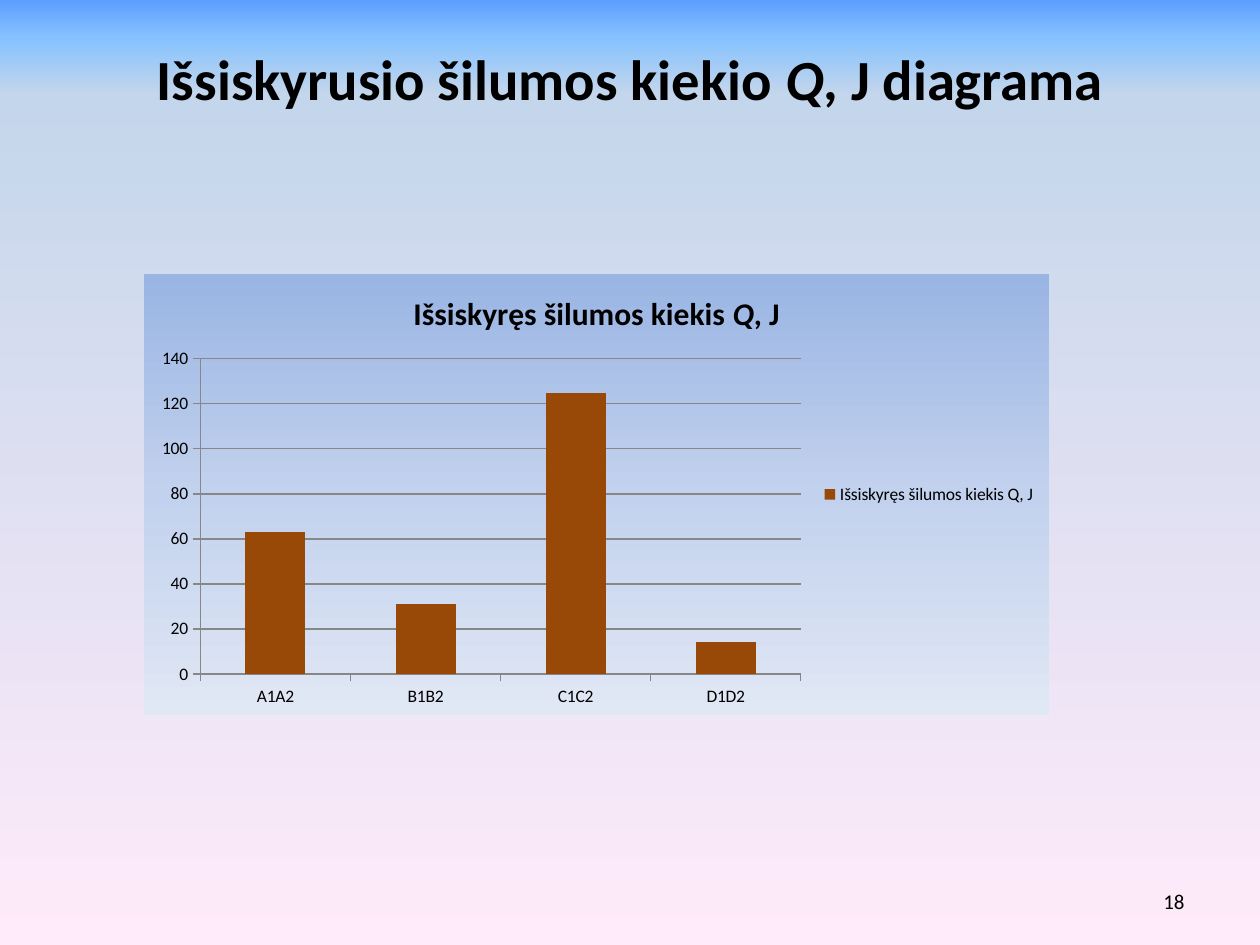
from lxml import etree
from pptx import Presentation
from pptx.chart.data import CategoryChartData
from pptx.dml.color import RGBColor
from pptx.enum.chart import XL_CHART_TYPE, XL_LEGEND_POSITION, XL_TICK_MARK
from pptx.enum.text import MSO_ANCHOR, PP_ALIGN
from pptx.oxml import parse_xml
from pptx.oxml.ns import qn
from pptx.util import Emu, Pt

COLUMNS = XL_CHART_TYPE.COLUMN_CLUSTERED
LEGEND_RIGHT = XL_LEGEND_POSITION.RIGHT
TICK_OUTSIDE = XL_TICK_MARK.OUTSIDE
TOP, MIDDLE = MSO_ANCHOR.TOP, MSO_ANCHOR.MIDDLE
CENTER, RIGHT = PP_ALIGN.CENTER, PP_ALIGN.RIGHT

EMU_PER_PX = 914400 / 126
FONT = "Calibri"
COLORS = {"text": "000000", "bar": "984807", "line": "878787"}
# Gradient stops: percent and colour, from top to bottom
SKY = [(0, "5E9EFF"), (4, "85C2FF"), (10, "C4D6EB"), (100, "FFEBFA")]
CHART_FILL = [(0, "9AB5E4"), (50, "C2D1ED"), (100, "E1E8F5")]


def px(value):
    return Emu(round(value * EMU_PER_PX))


def color(name):
    return RGBColor.from_string(COLORS[name])


def format_font(font, size, bold=False):
    font.name = FONT
    font.size = Pt(size)
    font.bold = bold
    font.color.rgb = color("text")


def write_runs(paragraph, pieces, size, bold=False):
    """Add (text, italic) pieces to a paragraph."""
    for text, italic in pieces:
        run = paragraph.add_run()
        run.text = text
        format_font(run.font, size, bold)
        run.font.italic = italic


def gradient(stops):
    """Return a vertical gradient fill element."""
    fill = etree.Element(qn("a:gradFill"), rotWithShape="1")
    stop_list = etree.SubElement(fill, qn("a:gsLst"))
    for percent, value in stops:
        stop = etree.SubElement(stop_list, qn("a:gs"), pos=str(percent * 1000))
        etree.SubElement(stop, qn("a:srgbClr"), val=value)
    etree.SubElement(fill, qn("a:lin"), ang="5400000", scaled="0")
    return parse_xml(etree.tostring(fill))


def paint_background(slide):
    slide.background.fill.solid()
    solid = next(slide.element.iter(qn("a:solidFill")))
    solid.getparent().replace(solid, gradient(SKY))


def add_title(slide):
    title = slide.shapes.title
    title.left, title.top, title.width, title.height = map(px, (63, 38, 1134, 157))
    title.text_frame.vertical_anchor = TOP
    paragraph = title.text_frame.paragraphs[0]
    paragraph.alignment = CENTER
    pieces = [("Išsiskyrusio šilumos kiekio ", False), ("Q", True), (", J diagrama", False)]
    write_runs(paragraph, pieces, 32.4, bold=True)


def fill_chart_area(chart):
    properties = etree.Element(qn("c:spPr"))
    properties.append(gradient(CHART_FILL))
    line = etree.SubElement(properties, qn("a:ln"))
    etree.SubElement(line, qn("a:noFill"))
    chart.element.find(qn("c:chart")).addnext(properties)


def format_axis(axis):
    axis.major_tick_mark = TICK_OUTSIDE
    axis.format.line.color.rgb = color("line")
    axis.format.line.width = Pt(0.75)


def add_heat_chart(slide):
    data = CategoryChartData()
    data.categories = ["A1A2", "B1B2", "C1C2", "D1D2"]
    data.add_series("Išsiskyręs šilumos kiekis Q, J", (63, 31, 125, 14))
    chart = slide.shapes.add_chart(COLUMNS, *map(px, (144, 274, 905, 441)), data).chart
    format_font(chart.font, 10)
    fill_chart_area(chart)

    # Chart title and legend
    chart.has_title = True
    paragraph = chart.chart_title.text_frame.paragraphs[0]
    pieces = [("Išsiskyręs šilumos kiekis ", False), ("Q", True), (", J", False)]
    write_runs(paragraph, pieces, 18, bold=True)
    chart.chart_title.include_in_layout = False
    chart.has_legend = True
    chart.legend.position = LEGEND_RIGHT
    chart.legend.include_in_layout = False

    # Columns
    plot = chart.plots[0]
    plot.gap_width = 150
    plot.vary_by_categories = False
    fill = plot.series[0].format.fill
    fill.solid()
    fill.fore_color.rgb = color("bar")

    # Axes
    format_axis(chart.category_axis)
    value_axis = chart.value_axis
    format_axis(value_axis)
    value_axis.minimum_scale, value_axis.maximum_scale = 0, 140
    value_axis.major_unit = 20
    value_axis.has_major_gridlines = True
    gridline = value_axis.major_gridlines.format.line
    gridline.color.rgb = color("line")
    gridline.width = Pt(0.75)


def add_page_number(slide):
    text_frame = slide.shapes.add_textbox(*map(px, (903, 876, 294, 50))).text_frame
    text_frame.word_wrap = True
    text_frame.vertical_anchor = MIDDLE
    text_frame.text = "18"
    paragraph = text_frame.paragraphs[0]
    paragraph.alignment = RIGHT
    format_font(paragraph.runs[0].font, 12)


def main():
    presentation = Presentation()
    presentation.slide_width, presentation.slide_height = px(1260), px(945)
    slide = presentation.slides.add_slide(presentation.slide_layouts[5])
    paint_background(slide)
    add_title(slide)
    add_heat_chart(slide)
    add_page_number(slide)
    presentation.save("out.pptx")


if __name__ == "__main__":
    main()
